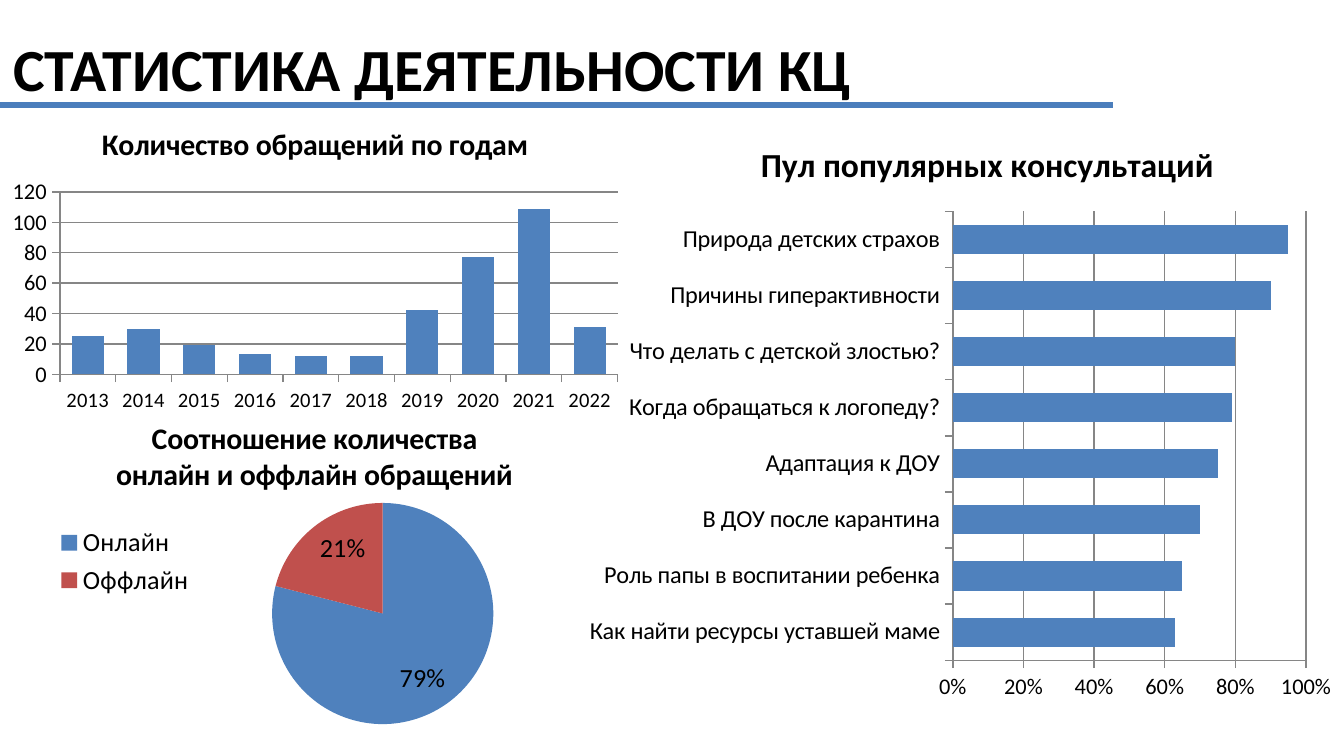
import pptx
import pptx.chart.data
import pptx.dml.color
import pptx.enum.chart
import pptx.enum.shapes
import pptx.enum.text
import pptx.oxml
import pptx.oxml.ns
import pptx.util

Cm = pptx.util.Cm
Pt = pptx.util.Pt
XL = pptx.enum.chart.XL_CHART_TYPE
FONT = "Calibri"
BLUE, RED, BLACK, GRAY, RULE = "4F81BD", "C0504D", "000000", "868686", "4B7EBC"

REQUESTS = {"2013": 25, "2014": 30, "2015": 19, "2016": 13, "2017": 12,
            "2018": 12, "2019": 42, "2020": 77, "2021": 109, "2022": 31}
FORMATS = {"Онлайн": 79, "Оффлайн": 21}
TOPICS = {
    "Как найти ресурсы уставшей маме": 0.63,
    "Роль папы в воспитании ребенка": 0.65,
    "В ДОУ после карантина": 0.7,
    "Адаптация к ДОУ": 0.75,
    "Когда обращаться к логопеду?": 0.79,
    "Что делать с детской злостью?": 0.8,
    "Причины гиперактивности": 0.9,
    "Природа детских страхов": 0.95,
}


def rgb(color):
    return pptx.dml.color.RGBColor.from_string(color)


def set_font(font, size, bold=False):
    for name, value in {"name": FONT, "size": Pt(size), "bold": bold}.items():
        setattr(font, name, value)
    font.color.rgb = rgb(BLACK)


def fill(part, color):
    part.format.fill.solid()
    part.format.fill.fore_color.rgb = rgb(color)


def add_header(s, left, top, width, height, text, rule_width):
    tf = s.shapes.add_textbox(Cm(left), Cm(top), Cm(width), Cm(height)).text_frame
    tf.word_wrap = True
    tf.vertical_anchor = pptx.enum.text.MSO_ANCHOR.MIDDLE
    r = tf.paragraphs[0].add_run()
    r.text = text
    set_font(r.font, 32, True)
    y = Cm(top + height)
    rule = s.shapes.add_connector(pptx.enum.shapes.MSO_CONNECTOR.STRAIGHT,
                                  Cm(left), y, Cm(left + rule_width), y)
    rule.line.color.rgb = rgb(RULE)
    rule.line.width = Pt(3)
    rule._element.spPr.append(pptx.oxml.parse_xml(
        f"<a:effectLst {pptx.oxml.ns.nsdecls('a')}/>"))


def set_plot_box(chart, x, y, w, h):
    area = chart._chartSpace.chart.plotArea
    for old in area.findall(pptx.oxml.ns.qn("c:layout")):
        area.remove(old)
    sizes = "".join(f'<c:{tag} val="{value}"/>'
                    for tag, value in zip("xywh", (x, y, w, h)))
    area.insert(0, pptx.oxml.parse_xml(
        f"<c:layout {pptx.oxml.ns.nsdecls('c')}><c:manualLayout>"
        '<c:layoutTarget val="inner"/><c:xMode val="edge"/><c:yMode val="edge"/>'
        f"{sizes}</c:manualLayout></c:layout>"))


def add_chart(s, box, kind, title, title_size, values, size):
    data = pptx.chart.data.CategoryChartData()
    data.categories = list(values)
    data.add_series("Series 1", list(values.values()))
    chart = s.shapes.add_chart(kind, *map(Cm, box), data).chart
    set_font(chart.font, size)
    chart.has_legend = False
    chart.has_title = True
    tf = chart.chart_title.text_frame
    tf.text = title
    set_font(tf.paragraphs[0].runs[0].font, title_size, True)
    chart.plots[0].vary_by_categories = False
    return chart


def add_bars(s, box, kind, title, title_size, values, label_size, gap):
    chart = add_chart(s, box, kind, title, title_size, values, 18)
    chart.plots[0].gap_width = gap
    fill(chart.series[0], BLUE)
    for axis, size in ((chart.category_axis, label_size), (chart.value_axis, 12)):
        set_font(axis.tick_labels.font, size)
        axis.major_tick_mark = pptx.enum.chart.XL_TICK_MARK.OUTSIDE
        axis.format.line.color.rgb = rgb(GRAY)
    chart.value_axis.has_major_gridlines = True
    chart.value_axis.major_gridlines.format.line.color.rgb = rgb(GRAY)
    return chart


def add_yearly_requests(s, *box):
    chart = add_bars(s, box, XL.COLUMN_CLUSTERED, "Количество обращений по годам",
                     16, REQUESTS, 11, 73)
    for name, value in {"minimum_scale": 0, "maximum_scale": 120, "major_unit": 20}.items():
        setattr(chart.value_axis, name, value)


def add_topics(s, *box):
    chart = add_bars(s, box, XL.BAR_CLUSTERED, "Пул популярных консультаций",
                     18, TOPICS, 13, 93)
    for name, value in {"minimum_scale": 0, "maximum_scale": 1, "major_unit": 0.2}.items():
        setattr(chart.value_axis, name, value)
    labels = chart.value_axis.tick_labels
    labels.number_format = "0%"
    labels.number_format_is_linked = False
    set_plot_box(chart, 0.46, 0.15, 0.41, 0.7)


def add_format_share(s, *box):
    chart = add_chart(s, box, XL.PIE, "Соотношение количества онлайн и оффлайн обращений",
                      16, FORMATS, 14)
    chart.plots[0].vary_by_categories = True
    for i, color in enumerate((BLUE, RED)):
        fill(chart.series[0].points[i], color)
    chart.has_legend = True
    chart.legend.position = pptx.enum.chart.XL_LEGEND_POSITION.LEFT
    chart.legend.include_in_layout = False
    set_font(chart.legend.font, 14)
    labels = chart.series[0].data_labels
    set_font(labels.font, 14)
    for name, value in {
        "show_percentage": True, "show_value": False,
        "number_format": "0%", "number_format_is_linked": False,
        "position": pptx.enum.chart.XL_LABEL_POSITION.INSIDE_END,
    }.items():
        setattr(labels, name, value)
    set_plot_box(chart, 0.42, 0.32, 0.41, 0.68)


def main():
    prs = pptx.Presentation()
    prs.slide_width, prs.slide_height = Cm(25.4), Cm(14.29)
    s = prs.slides.add_slide(prs.slide_layouts[6])
    add_yearly_requests(s, 0, 1.98, 11.91, 5.94)
    add_format_share(s, 0.79, 7.54, 10.31, 6.15)
    add_header(s, 0, 0.58, 23.85, 1.4, "СТАТИСТИКА ДЕЯТЕЛЬНОСТИ КЦ", 21.03)
    add_topics(s, 10.52, 2.18, 16.28, 12.12)
    prs.save("out.pptx")


if __name__ == "__main__":
    main()
